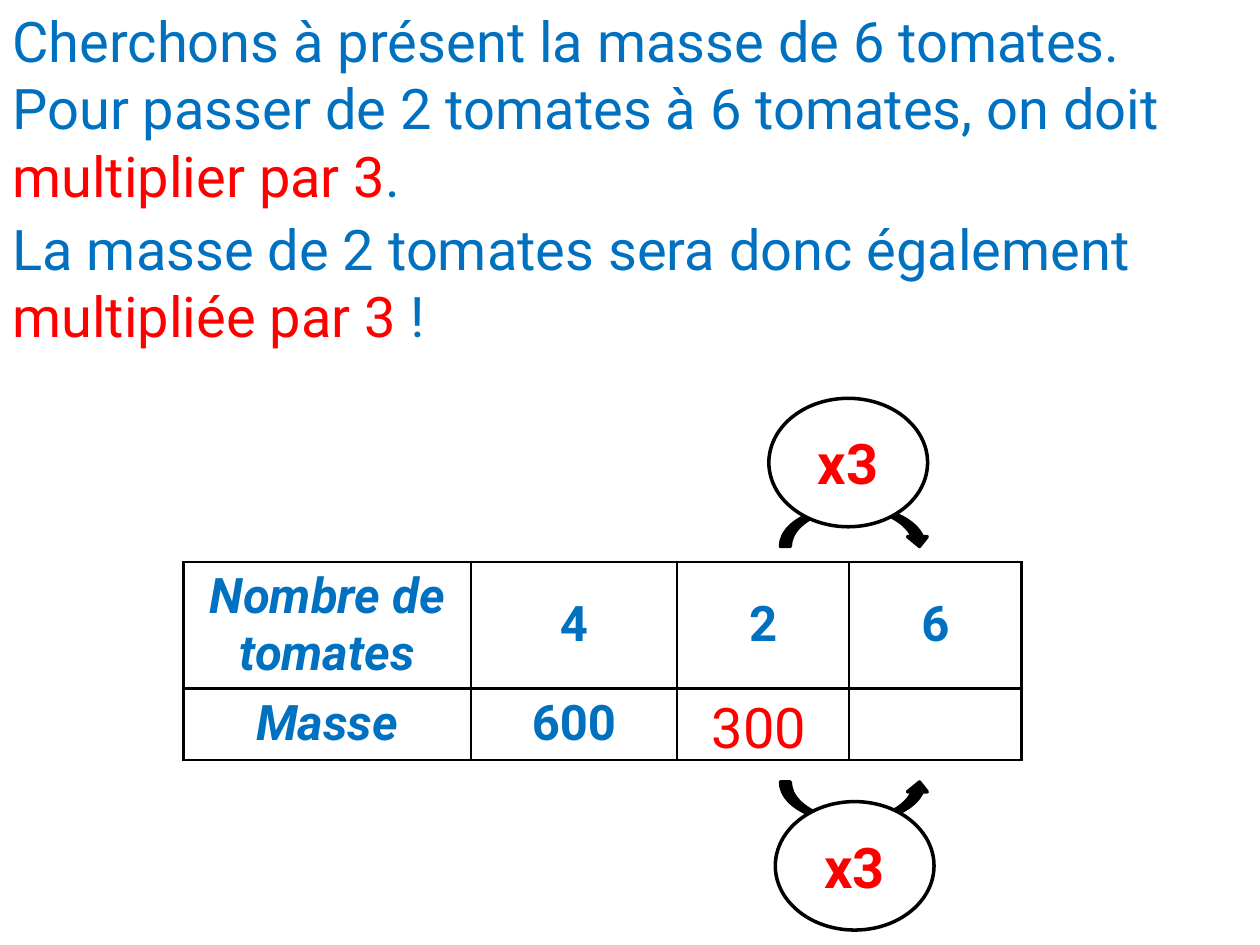
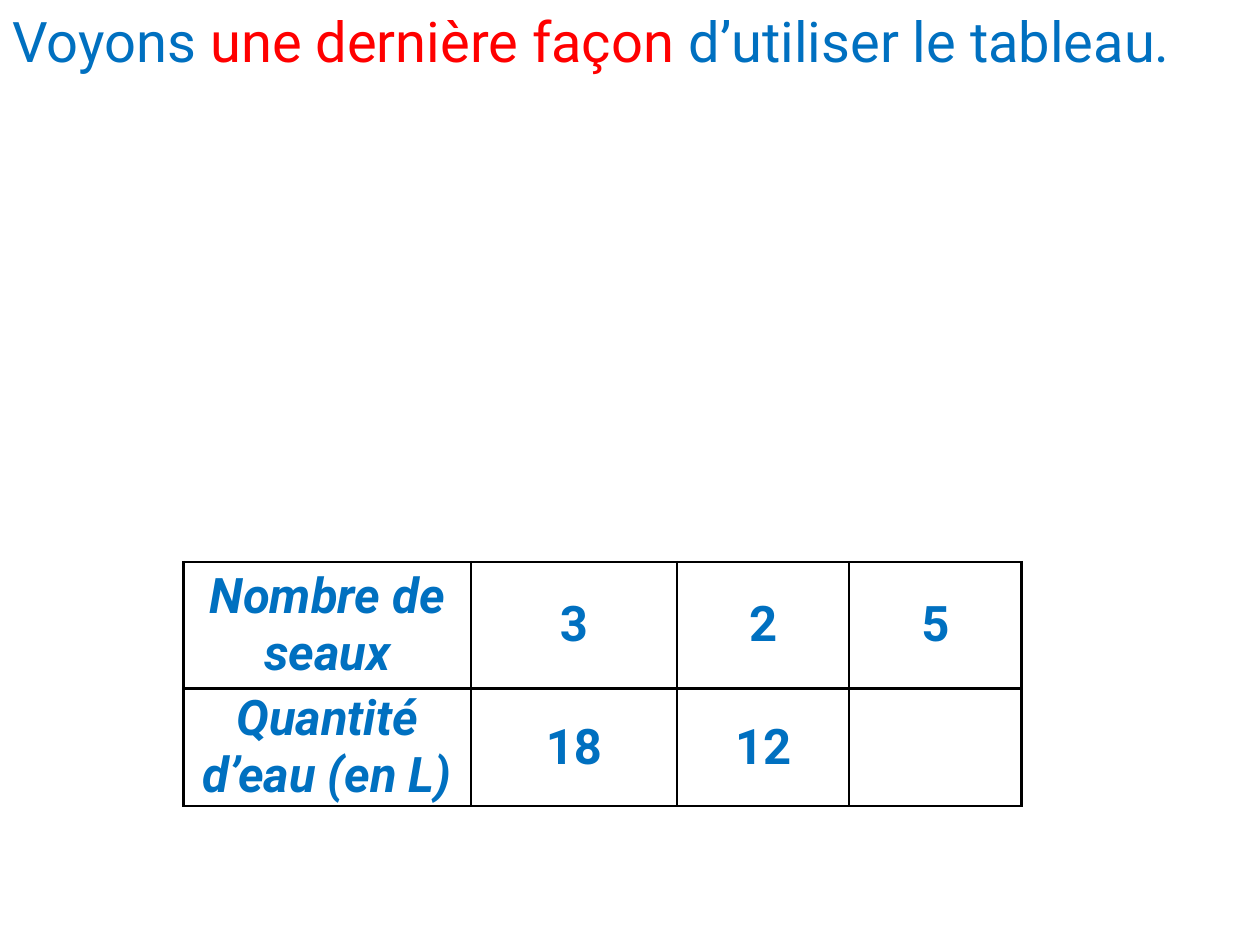
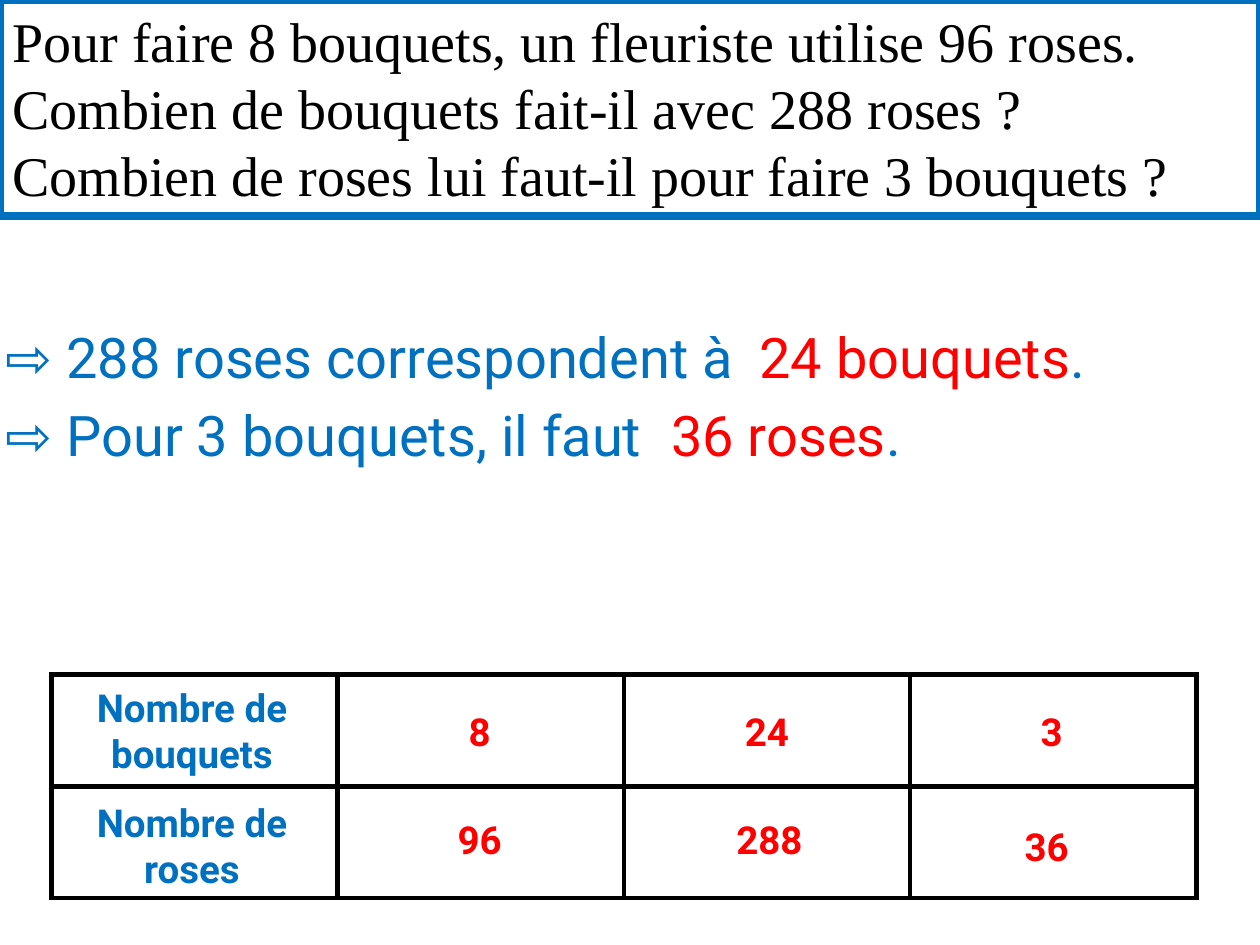
from dataclasses import dataclass

import pptx
import pptx.dml.color
import pptx.enum.shapes
import pptx.enum.text
import pptx.oxml
import pptx.oxml.ns
import pptx.util
from pptx.util import Cm

ALIGN = pptx.enum.text.PP_ALIGN
ANCHOR = pptx.enum.text.MSO_ANCHOR
SHAPE = pptx.enum.shapes.MSO_SHAPE


@dataclass(frozen=True)
class Theme:
    blue: str = "0070C0"
    red: str = "FF0000"
    black: str = "000000"
    white: str = "FFFFFF"
    font: str = "Roboto"
    serif: str = "Times New Roman"
    body: int = 32
    cell: int = 28
    label: int = 22


THEME = Theme()


@dataclass(frozen=True)
class Box:
    """Left, top, width and height in centimetres."""
    left: float
    top: float
    width: float
    height: float

    def lengths(self) -> list:
        return [Cm(v) for v in (self.left, self.top, self.width, self.height)]


@dataclass(frozen=True)
class Run:
    text: str
    color: str = THEME.blue


@dataclass(frozen=True)
class Sentence:
    box: Box
    runs: tuple[Run, ...]


@dataclass(frozen=True)
class Multiplier:
    """A labelled oval over a curved arrow from one column to the next."""
    arrow: Box
    oval: Box
    rotation: int
    flipped: bool = False


@dataclass(frozen=True)
class GridEntry:
    text: str
    row: int
    column: int
    drop: float
    shift: float = 0


def rgb(color: str) -> pptx.dml.color.RGBColor:
    return pptx.dml.color.RGBColor.from_string(color)


def write(frame, *paragraphs: tuple[Run, ...], size=THEME.body, font=THEME.font, bold=False,
          italic=False, align=ALIGN.LEFT) -> None:
    """Fill a text frame, one tuple of runs per paragraph."""
    for index, runs in enumerate(paragraphs):
        paragraph = frame.add_paragraph() if index else frame.paragraphs[0]
        paragraph.alignment = align
        for part in runs:
            run = paragraph.add_run()
            run.text = part.text
            run.font.size = pptx.util.Pt(size)
            run.font.name = font
            run.font.bold = bold
            run.font.italic = italic
            run.font.color.rgb = rgb(part.color)


def add_text(slide, box: Box, *runs: Run, **style) -> None:
    frame = slide.shapes.add_textbox(*box.lengths()).text_frame
    frame.word_wrap = True
    frame.auto_size = pptx.enum.text.MSO_AUTO_SIZE.SHAPE_TO_FIT_TEXT
    write(frame, runs, **style)


def add_preset(shapes, kind, box: Box, fill: str | None, line: str, line_width: float):
    shape = shapes.add_shape(kind, *box.lengths())
    shape.shadow.inherit = False
    if fill:
        shape.fill.solid()
        shape.fill.fore_color.rgb = rgb(fill)
    else:
        shape.fill.background()
    shape.line.color.rgb = rgb(line)
    shape.line.width = pptx.util.Pt(line_width)
    shape.text_frame.word_wrap = True
    return shape


def border_cell(cell, width: float) -> None:
    properties = cell._tc.get_or_add_tcPr()
    for side in ("lnL", "lnR", "lnT", "lnB"):
        properties.append(pptx.oxml.parse_xml(
            f'<a:{side} {pptx.oxml.ns.nsdecls("a")} w="{pptx.util.Pt(width)}">'
            f'<a:solidFill><a:srgbClr val="{THEME.black}"/></a:solidFill></a:{side}>'))


def add_grid(slide, left: float, top: float, widths: list[float], heights: list[float],
             border: float):
    box = Box(left, top, sum(widths), sum(heights))
    table = slide.shapes.add_table(len(heights), len(widths), *box.lengths()).table
    table.first_row = table.horz_banding = False
    for column, width in zip(table.columns, widths):
        column.width = Cm(width)
    for row, height in zip(table.rows, heights):
        row.height = Cm(height)
    for cell in table.iter_cells():
        border_cell(cell, border)
        cell.fill.solid()
        cell.fill.fore_color.rgb = rgb(THEME.white)
    return table


def add_proportion_table(slide, rows: list[list[str]], second_height: float) -> None:
    """Two proportional quantities, with an italic heading in the first column."""
    table = add_grid(slide, 3.7, 11.33, [5.79, 4.16, 3.47, 3.47], [2.55, second_height], 1.5)
    for y, row in enumerate(rows):
        for x, text in enumerate(row):
            if not text:
                continue
            cell = table.cell(y, x)
            cell.vertical_anchor = ANCHOR.MIDDLE
            cell.margin_left = cell.margin_right = Cm(0.17)
            cell.margin_top = cell.margin_bottom = 0
            write(cell.text_frame, (Run(text),), size=THEME.cell, bold=True, italic=x == 0,
                  align=ALIGN.CENTER)


def add_multiplier(slide, multiplier: Multiplier, text: str) -> None:
    group = slide.shapes.add_group_shape()
    arrow = add_preset(group.shapes, SHAPE.CURVED_LEFT_ARROW, multiplier.arrow,
                       THEME.black, THEME.black, 2)
    arrow.rotation = multiplier.rotation
    if multiplier.flipped:
        arrow._element.spPr.xfrm.set("flipV", "1")
    oval = add_preset(group.shapes, SHAPE.OVAL, multiplier.oval, THEME.white, THEME.black, 2)
    oval.text_frame.vertical_anchor = ANCHOR.MIDDLE
    write(oval.text_frame, (Run(text, THEME.red),), bold=True, align=ALIGN.CENTER)


def build_tomatoes(slide) -> None:
    add_proportion_table(slide, [["Nombre de tomates", "4", "2", "6"],
                                 ["Masse", "600", "", ""]], 1.44)
    add_text(slide, Box(14.1, 13.84, 2.59, 1.62), Run("300", THEME.red))

    # Reasoning
    for sentence in (
        Sentence(Box(0, 0, 25.4, 1.62), (Run("Cherchons à présent la masse de 6 tomates."),)),
        Sentence(Box(0, 1.35, 25.4, 1.62),
                 (Run("Pour passer de 2 tomates à 6 tomates, on doit"),)),
        Sentence(Box(0, 2.72, 25.4, 1.62), (Run("multiplier par 3", THEME.red), Run("."))),
        Sentence(Box(0, 4.19, 25.4, 2.99),
                 (Run("La masse de 2 tomates sera donc également "),
                  Run("multipliée par 3 ", THEME.red), Run("!"))),
    ):
        add_text(slide, sentence.box, *sentence.runs)

    # Multiplication above and below the table
    for multiplier in (
        Multiplier(Box(16.84, 9.12, 0.79, 3), Box(15.5, 8.03, 3.2, 2.59), 270),
        Multiplier(Box(16.84, 14.66, 0.79, 3), Box(15.63, 16.16, 3.2, 2.59), 90, flipped=True),
    ):
        add_multiplier(slide, multiplier, "x3")


def build_buckets(slide) -> None:
    add_text(slide, Box(0, 0, 25.4, 1.62), Run("Voyons "),
             Run("une dernière façon", THEME.red), Run(" d’utiliser le tableau."))
    add_proportion_table(slide, [["Nombre de seaux", "3", "2", "5"],
                                 ["Quantité d’eau (en L)", "18", "12", ""]], 2.36)


def build_roses(slide) -> None:
    left, top, column_width, row_height = 1.04, 13.6, 5.77, 2.25
    add_grid(slide, left, top, [column_width] * 4, [row_height] * 2, 3)

    # Problem
    problem = add_preset(slide.shapes, SHAPE.RECTANGLE, Box(0, 0, 25.4, 4.36),
                         None, THEME.blue, 4.5)
    problem.text_frame.vertical_anchor = ANCHOR.TOP
    questions = ("Pour faire 8 bouquets, un fleuriste utilise 96 roses.",
                 "Combien de bouquets fait-il avec 288 roses ?",
                 "Combien de roses lui faut-il pour faire 3 bouquets ?")
    write(problem.text_frame, *((Run(question, THEME.black),) for question in questions),
          font=THEME.serif)

    # Headings and values laid over the grid
    for entry in (
        GridEntry("Nombre de bouquets", 0, 0, 0.07),
        GridEntry("Nombre de roses", 1, 0, 0.13),
        GridEntry("8", 0, 1, 0.55, 0.03),
        GridEntry("96", 1, 1, 0.48, 0.03),
        GridEntry("24", 0, 2, 0.55, 0.05),
        GridEntry("288", 1, 2, 0.48, 0.1),
        GridEntry("3", 0, 3, 0.55, 0.02),
        GridEntry("36", 1, 3, 0.61, -0.08),
    ):
        heading = entry.column == 0
        box = Box(left + entry.column * column_width + entry.shift,
                  top + entry.row * row_height + entry.drop, 5.66, 2.13 if heading else 1.19)
        add_text(slide, box, Run(entry.text, THEME.blue if heading else THEME.red),
                 size=THEME.label, bold=True, align=ALIGN.CENTER)

    # Answers
    for statement, answer, answer_left, answer_top in (
        ("⇨ 288 roses correspondent à", "24 bouquets", 15.06, 6.38),
        ("⇨ Pour 3 bouquets, il faut", "36 roses", 13.28, 7.95),
    ):
        add_text(slide, Box(-0.14, answer_top, answer_left + 0.3, 1.62), Run(statement))
        add_text(slide, Box(answer_left, answer_top, 7.24, 1.62),
                 Run(answer, THEME.red), Run("."))


def main() -> None:
    presentation = pptx.Presentation()
    presentation.slide_width, presentation.slide_height = Cm(25.4), Cm(19.05)
    for build in (build_tomatoes, build_buckets, build_roses):
        build(presentation.slides.add_slide(presentation.slide_layouts[6]))
    presentation.save("out.pptx")


if __name__ == "__main__":
    main()
